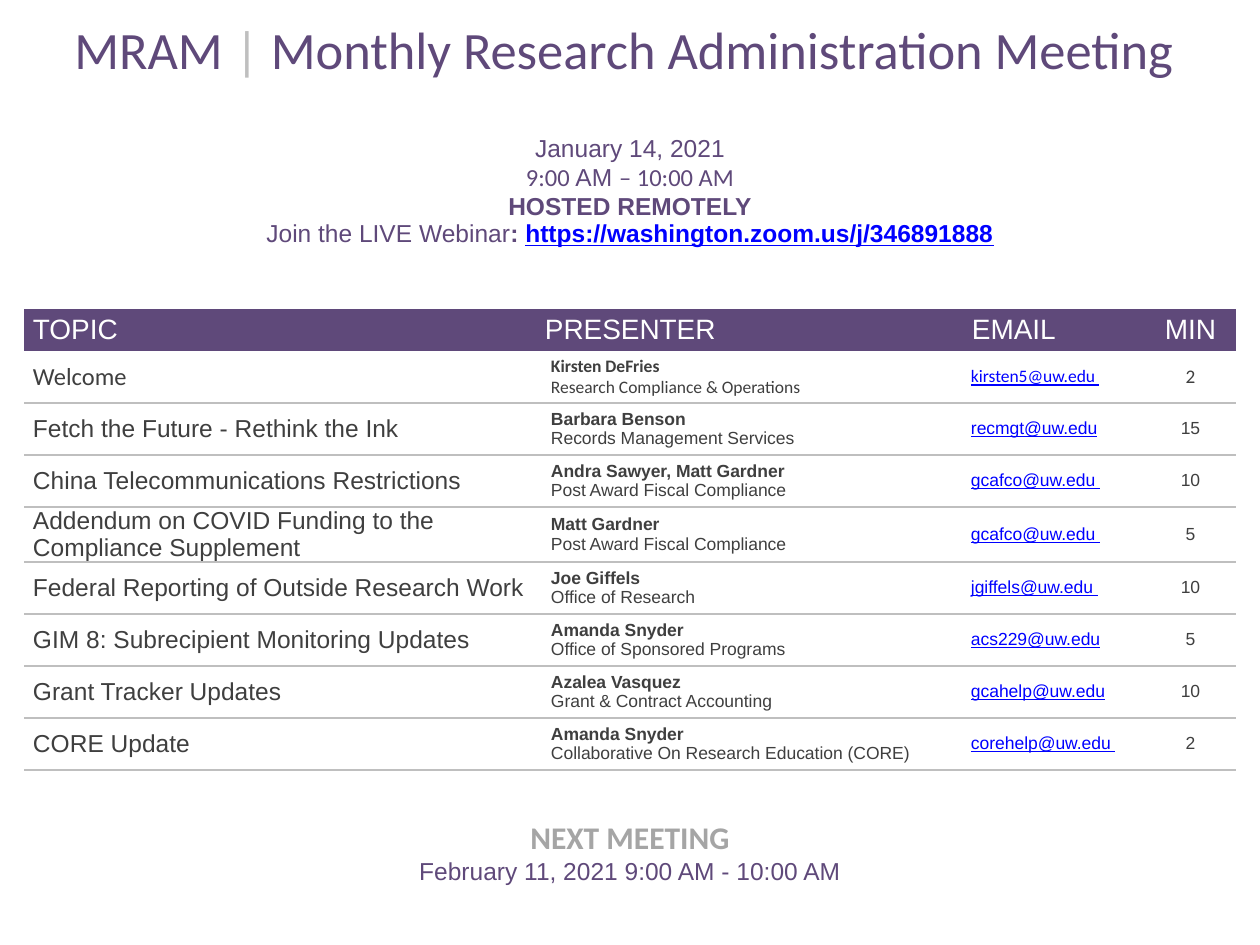
from lxml import etree
from pptx import Presentation, util as u
from pptx.dml.color import RGBColor
from pptx.enum import text
from pptx.oxml import ns

PURPLE, GRAY, DARK, BLUE, WHITE = "5F497A", "BFBFBF", "3F3F3F", "0000FF", "FFFFFF"
COLUMNS = [512, 420, 189, 91]
ROWS = [79, 225, 42, 52, 52, 52, 55, 52, 52, 52, 52, 118]
PLAIN_STYLE = "{2D5ABB26-0587-4C30-8999-92F81FD0307C}"

AGENDA = [
    ("Welcome", "Kirsten DeFries", "Research Compliance & Operations", "kirsten5@uw.edu ", "2"),
    ("Fetch the Future - Rethink the Ink", "Barbara Benson", "Records Management Services", "recmgt@uw.edu", "15"),
    ("China Telecommunications Restrictions", "Andra Sawyer, Matt Gardner",
     "Post Award Fiscal Compliance", "gcafco@uw.edu ", "10"),
    ("Addendum on COVID Funding to the Compliance Supplement", "Matt Gardner",
     "Post Award Fiscal Compliance", "gcafco@uw.edu ", "5"),
    ("Federal Reporting of Outside Research Work", "Joe Giffels", "Office of Research", "jgiffels@uw.edu ", "10"),
    ("GIM 8: Subrecipient Monitoring Updates", "Amanda Snyder", "Office of Sponsored Programs", "acs229@uw.edu", "5"),
    ("Grant Tracker Updates", "Azalea Vasquez", "Grant & Contract Accounting", "gcahelp@uw.edu", "10"),
    ("CORE Update", "Amanda Snyder", "Collaborative On Research Education (CORE)", "corehelp@uw.edu ", "2"),
]


def px(length):
    return u.Emu(round(length * 914400 / 126))


def color(value):
    return RGBColor.from_string(value)


def add_run(paragraph, content, size=14, font="Arial", fill=PURPLE, bold=False, underline=False):
    run = paragraph.add_run()
    run.text = content
    run.font.size = u.Pt(size)
    run.font.name = font
    run.font.color.rgb = color(fill)
    run.font.bold = bold
    run.font.underline = underline


class AgendaSlide:
    def __init__(self, presentation):
        self.slide = presentation.slides.add_slide(presentation.slide_layouts[6])

    def add_table(self, left, top, columns, rows):
        frame = self.slide.shapes.add_table(len(rows), len(columns), px(left), px(top), px(sum(columns)), px(sum(rows)))
        self.table = frame.table
        self.table.first_row = self.table.horz_banding = False
        self.table._tbl.tblPr.find(ns.qn("a:tableStyleId")).text = PLAIN_STYLE
        for column, width in zip(self.table.columns, columns):
            column.width = px(width)
        for row, height in zip(self.table.rows, rows):
            row.height = px(height)

    def cell(self, row, column, lines, fill=WHITE, centered=False, anchor="MIDDLE",
             left=9, top=0, bottom=0, rule=False):
        cell = self.table.cell(row, column)
        cell.margin_left, cell.margin_right = px(left), px(9)
        cell.margin_top, cell.margin_bottom = px(top), px(bottom)
        cell.vertical_anchor = text.MSO_ANCHOR[anchor]
        cell.fill.solid()
        cell.fill.fore_color.rgb = color(fill)
        if rule:
            self.rule_below(cell)
        for index, runs in enumerate(lines):
            frame = cell.text_frame
            paragraph = frame.add_paragraph() if index else frame.paragraphs[0]
            paragraph.alignment = text.PP_ALIGN.CENTER if centered else text.PP_ALIGN.LEFT
            for content, style in runs:
                add_run(paragraph, content, **style)

    def rule_below(self, cell):
        line = etree.Element(ns.qn("a:lnB"), w=str(u.Pt(1)))
        solid = etree.SubElement(line, ns.qn("a:solidFill"))
        etree.SubElement(solid, ns.qn("a:srgbClr"), val=GRAY)
        cell._tc.get_or_add_tcPr().insert(0, line)

    def banner(self, row, lines, **layout):
        self.table.cell(row, 0).merge(self.table.cell(row, len(COLUMNS) - 1))
        self.cell(row, 0, lines, centered=True, **layout)

    def heading(self, row, labels):
        for column, label in enumerate(labels):
            self.cell(row, column, [[(label, dict(size=16, fill=WHITE))]], fill=PURPLE,
                      centered=label == "MIN", left=16 if label == "EMAIL" else 9)

    def topic(self, row, entry, font="Arial", minutes_size=10):
        title, presenter, office, email, minutes = entry
        body = dict(font=font, fill=DARK)
        small = dict(body, size=10)
        link = dict(small, fill=BLUE, underline=True)
        self.cell(row, 0, [[(title, body)]], rule=True)
        self.cell(row, 1, [[(presenter, dict(small, bold=True))], [(office, small)]], left=15, rule=True)
        self.cell(row, 2, [[(email, link)]], left=15, rule=True)
        self.cell(row, 3, [[(minutes, dict(body, size=minutes_size))]], centered=True, rule=True)


def main():
    presentation = Presentation()
    presentation.slide_width, presentation.slide_height = u.Inches(10), u.Inches(7.5)
    agenda = AgendaSlide(presentation)
    agenda.add_table(24, 5, COLUMNS, ROWS)

    title = dict(size=30, font="Calibri")
    agenda.banner(0, [[("MRAM ", title), ("|", dict(title, fill=GRAY)),
                       (" Monthly Research Administration Meeting ", title)]], anchor="BOTTOM")
    calibri, bold = dict(font="Calibri"), dict(bold=True)
    agenda.banner(1, [
        [("January 14, 2021", {})],
        [("9:00 ", calibri), ("AM ", {}), ("– 10:00 AM", calibri)],
        [("HOSTED REMOTELY", bold)],
        [("Join the LIVE Webinar", {}), (": ", bold),
         ("https://washington.zoom.us/j/346891888", dict(fill=BLUE, bold=True, underline=True))],
    ], anchor="BOTTOM", bottom=61)

    agenda.heading(2, ["TOPIC", "PRESENTER", "EMAIL", "MIN"])
    agenda.topic(3, AGENDA[0], font="Calibri", minutes_size=11)
    for row, entry in enumerate(AGENDA[1:], 4):
        agenda.topic(row, entry)

    agenda.banner(11, [
        [("NEXT MEETING", dict(size=18, font="Calibri", fill="A5A5A5", bold=True))],
        [("February 11, 2021 9:00 AM - 10:00 AM", {})],
    ], anchor="TOP", top=50)
    presentation.save("out.pptx")


if __name__ == "__main__":
    main()
